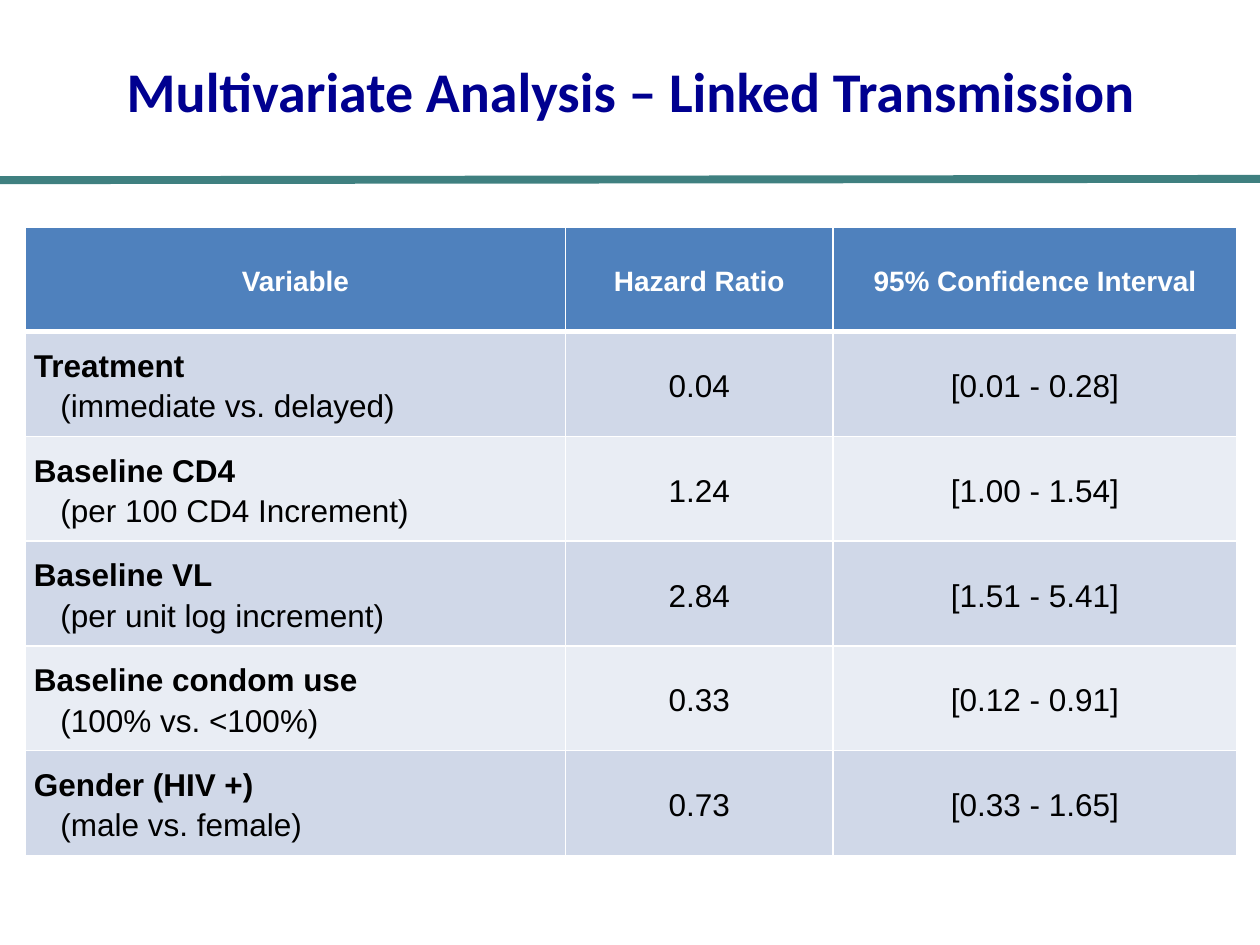
from lxml.etree import SubElement
from pptx import Presentation
from pptx.dml.color import RGBColor
from pptx.enum.shapes import MSO_CONNECTOR as Connector
from pptx.enum.text import MSO_ANCHOR as Anchor, PP_ALIGN as Align
from pptx.oxml.ns import qn
from pptx.util import Inches, Pt

HEADERS = ["Variable", "Hazard Ratio", "95% Confidence Interval"]
FACTORS = [
    ("Treatment", "(immediate vs. delayed)", "0.04", "[0.01 - 0.28]"),
    ("Baseline CD4", "(per 100 CD4 Increment)", "1.24", "[1.00 - 1.54]"),
    ("Baseline VL", "(per unit log increment)", "2.84", "[1.51 - 5.41]"),
    ("Baseline condom use", "(100% vs. <100%)", "0.33", "[0.12 - 0.91]"),
    ("Gender (HIV +)", "(male vs. female)", "0.73", "[0.33 - 1.65]"),
]
COLUMN_SHARES = [4.29, 2.12, 3.21]
HEADER_FILL = "4F81BD"
BAND_FILLS = ["D0D8E8", "E9EDF4"]


def color(hex_code):
    return RGBColor.from_string(hex_code)


def write(paragraph, text, size=18, font="Arial", ink="000000", bold=False,
          align=Align.CENTER, spacing=1.15, indent=0):
    paragraph.alignment = align
    paragraph.line_spacing = spacing
    if indent:
        properties = paragraph._p.get_or_add_pPr()
        properties.set("marL", str(Inches(indent)))
        properties.set("indent", "0")
    run = paragraph.add_run()
    run.text = text
    run.font.name = font
    run.font.size = Pt(size)
    run.font.bold = bold
    run.font.color.rgb = color(ink)


def set_borders(cell, top=1, bottom=1):
    """Give the cell white borders; must run before its fill is set."""
    properties = cell._tc.get_or_add_tcPr()
    for side, width in (("L", 1), ("R", 1), ("T", top), ("B", bottom)):
        border = SubElement(properties, qn(f"a:ln{side}"), w=str(Pt(width)))
        fill = SubElement(border, qn("a:solidFill"))
        SubElement(fill, qn("a:srgbClr"), val="FFFFFF")


def style_cell(cell, fill, **border_widths):
    set_borders(cell, **border_widths)
    cell.fill.solid()
    cell.fill.fore_color.rgb = color(fill)
    cell.vertical_anchor = Anchor.MIDDLE
    cell.margin_left = cell.margin_right = Inches(0.07)
    cell.margin_top = cell.margin_bottom = 0


def add_title(slide, left, top, width, height):
    title = slide.shapes.add_textbox(
        Inches(left), Inches(top), Inches(width), Inches(height))
    frame = title.text_frame
    frame.word_wrap = True
    frame.vertical_anchor = Anchor.MIDDLE
    write(frame.paragraphs[0], "Multivariate Analysis – Linked Transmission",
          size=32, font="Calibri", ink="000090", bold=True, spacing=1.0)


def add_divider(slide, left, top, width, rise):
    divider = slide.shapes.add_connector(
        Connector.STRAIGHT, Inches(left), Inches(top),
        Inches(left + width), Inches(top - rise))
    divider.line.color.rgb = color("3F8080")
    divider.line.width = Pt(4.5)
    SubElement(divider._element.spPr, qn("a:effectLst"))


def add_hazard_table(slide, left, top, width, height):
    row_count = len(FACTORS) + 1
    table = slide.shapes.add_table(
        row_count, len(HEADERS), Inches(left), Inches(top),
        Inches(width), Inches(height)).table
    for column, share in zip(table.columns, COLUMN_SHARES):
        column.width = Inches(width * share / sum(COLUMN_SHARES))
    for row in table.rows:
        row.height = Inches(height / row_count)

    for column, header in enumerate(HEADERS):
        cell = table.cell(0, column)
        style_cell(cell, HEADER_FILL, bottom=3)
        write(cell.text_frame.paragraphs[0], header,
              size=16, ink="FFFFFF", bold=True)

    for row, (factor, comparison, *estimates) in enumerate(FACTORS, start=1):
        cells = [table.cell(row, column) for column in range(len(HEADERS))]
        for cell in cells:
            style_cell(cell, BAND_FILLS[(row - 1) % 2], top=3 if row == 1 else 1)
        label = cells[0].text_frame
        write(label.paragraphs[0], factor, bold=True, align=Align.LEFT)
        write(label.add_paragraph(), comparison, align=Align.LEFT, indent=0.21)
        for cell, estimate in zip(cells[1:], estimates):
            write(cell.text_frame.paragraphs[0], estimate)


def main():
    deck = Presentation()
    deck.slide_width, deck.slide_height = Inches(10), Inches(7.5)
    slide = deck.slides.add_slide(deck.slide_layouts[6])
    add_hazard_table(slide, 0.2, 1.8, 9.62, 4.99)
    add_divider(slide, 0, 1.43, 10, 0.01)
    add_title(slide, 0.01, 0.01, 10, 1.41)
    deck.save("out.pptx")


if __name__ == "__main__":
    main()
